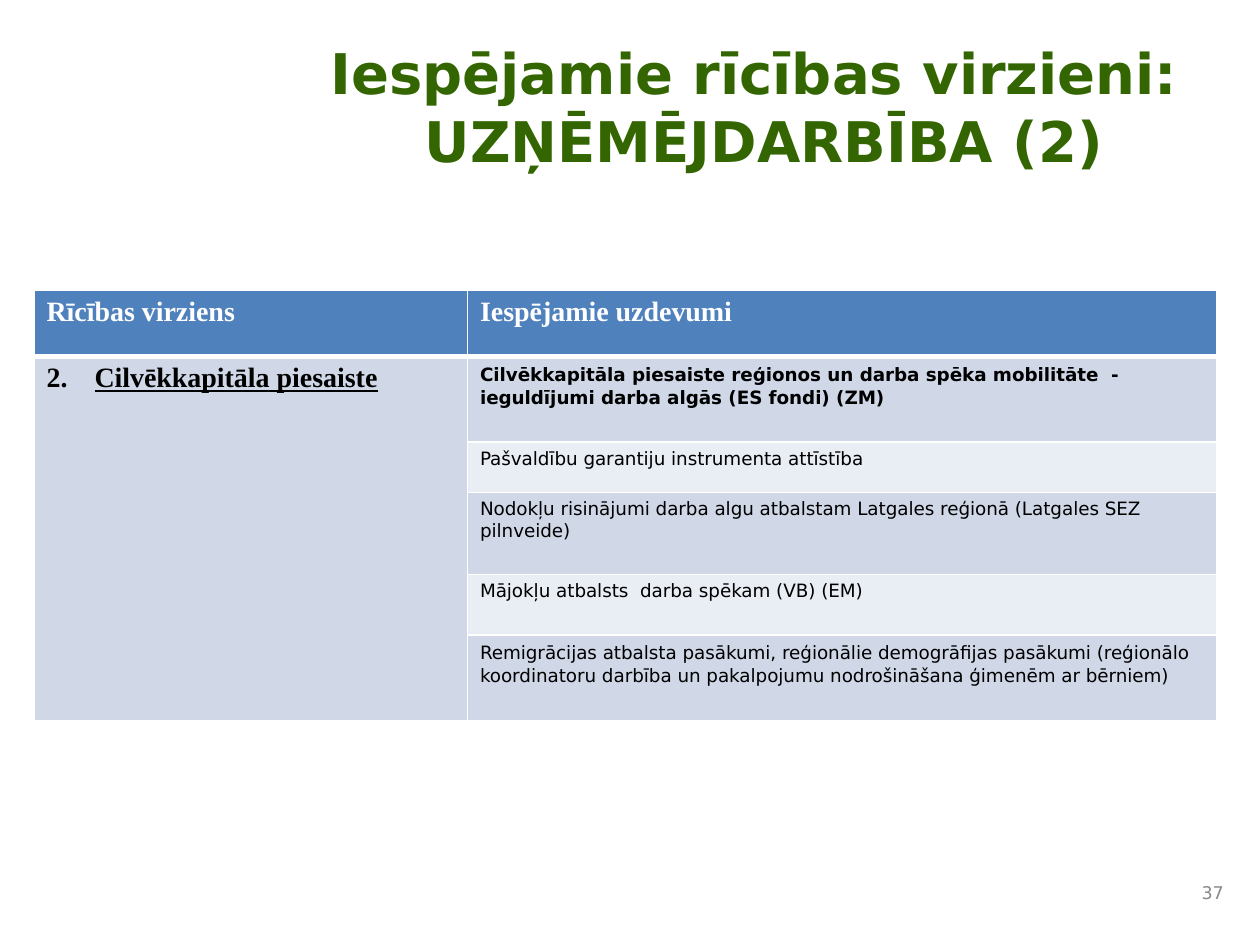
from pptx import Presentation
from pptx.dml.color import RGBColor
from pptx.enum.text import MSO_ANCHOR, PP_ALIGN
from pptx.oxml.ns import qn
from pptx.util import Inches, Pt
from lxml import etree

CENTER, RIGHT = PP_ALIGN.CENTER, PP_ALIGN.RIGHT
TOP, MIDDLE = MSO_ANCHOR.TOP, MSO_ANCHOR.MIDDLE

WHITE = RGBColor(0xFF, 0xFF, 0xFF)
BLACK = RGBColor(0, 0, 0)
GREEN = RGBColor(0x33, 0x66, 0x00)
GRAY = RGBColor(0x89, 0x89, 0x89)
BLUE = RGBColor(0x4F, 0x81, 0xBD)
BANDS = (RGBColor(0xD0, 0xD8, 0xE8), RGBColor(0xE9, 0xED, 0xF4))

SANS, SERIF = "DejaVu Sans", "Times New Roman"

COLUMN_WIDTHS = (3.44, 5.95)
ROW_HEIGHTS = (0.53, 0.68, 0.4, 0.65, 0.48, 0.68)
HEADERS = ("Rīcības virziens", "Iespējamie uzdevumi")
DIRECTION = "Cilvēkkapitāla piesaiste"
# Text, bold, line spacing
TASKS = (
    ("Cilvēkkapitāla piesaiste reģionos un darba spēka mobilitāte  - "
     "ieguldījumi darba algās (ES fondi) (ZM)", True, 1.07),
    ("Pašvaldību garantiju instrumenta attīstība", False, 1),
    ("Nodokļu risinājumi darba algu atbalstam Latgales reģionā "
     "(Latgales SEZ pilnveide)", False, 1),
    ("Mājokļu atbalsts  darba spēkam (VB) (EM)", False, 1),
    ("Remigrācijas atbalsta pasākumi, reģionālie demogrāfijas pasākumi "
     "(reģionālo koordinatoru darbība un pakalpojumu nodrošināšana ģimenēm "
     "ar bērniem)", False, 1.07),
)


class SlideBuilder:
    def __init__(self, slide):
        self.slide = slide

    def run(self, paragraph, text, size, color, font=SANS, bold=False, underline=False):
        run = paragraph.add_run()
        run.text = text
        run.font.name = font
        run.font.size = Pt(size)
        run.font.bold = bold
        run.font.underline = underline
        run.font.color.rgb = color

    def text_box(self, left, top, width, height, align, anchor):
        """Add an empty text box and return its first paragraph."""
        box = self.slide.shapes.add_textbox(
            Inches(left), Inches(top), Inches(width), Inches(height))
        frame = box.text_frame
        frame.word_wrap = True
        frame.vertical_anchor = anchor
        paragraph = frame.paragraphs[0]
        paragraph.alignment = align
        return paragraph

    def table(self, left, top, column_widths, row_heights):
        frame = self.slide.shapes.add_table(
            len(row_heights), len(column_widths), Inches(left), Inches(top),
            Inches(sum(column_widths)), Inches(sum(row_heights)))
        table = frame.table
        for column, width in zip(table.columns, column_widths):
            column.width = Inches(width)
        for row, height in zip(table.rows, row_heights):
            row.height = Inches(height)
        return table

    def cell(self, cell, fill, bottom=1, top=1):
        """Style a cell with white borders and return its first paragraph."""
        properties = cell._tc.get_or_add_tcPr()
        for side, width in (("lnL", 1), ("lnR", 1), ("lnT", top), ("lnB", bottom)):
            line = etree.SubElement(properties, qn(f"a:{side}"), w=str(Pt(width)))
            solid = etree.SubElement(line, qn("a:solidFill"))
            etree.SubElement(solid, qn("a:srgbClr"), val=str(WHITE))
        cell.fill.solid()
        cell.fill.fore_color.rgb = fill
        return cell.text_frame.paragraphs[0]

    def number(self, paragraph, start, indent):
        """Number a paragraph with a hanging indent."""
        properties = paragraph._p.get_or_add_pPr()
        properties.set("marL", str(Inches(indent)))
        properties.set("indent", str(-Inches(indent)))
        etree.SubElement(properties, qn("a:buAutoNum"),
                         type="arabicPeriod", startAt=str(start))


def main():
    presentation = Presentation()
    presentation.slide_width, presentation.slide_height = Inches(10), Inches(7.5)
    builder = SlideBuilder(presentation.slides.add_slide(presentation.slide_layouts[6]))

    table = builder.table(0.27, 2.3, COLUMN_WIDTHS, ROW_HEIGHTS)
    for column, header in enumerate(HEADERS):
        paragraph = builder.cell(table.cell(0, column), BLUE, bottom=3)
        builder.run(paragraph, header, 16, WHITE, SERIF, bold=True)

    direction_cell = table.cell(1, 0)
    direction_cell.merge(table.cell(len(TASKS), 0))
    paragraph = builder.cell(direction_cell, BANDS[0], top=3)
    builder.number(paragraph, 2, 0.38)
    builder.run(paragraph, DIRECTION, 16, BLACK, SERIF, bold=True, underline=True)

    for index, (text, bold, spacing) in enumerate(TASKS):
        paragraph = builder.cell(table.cell(index + 1, 1), BANDS[index % 2],
                                 top=1 if index else 3)
        paragraph.line_spacing = spacing
        builder.run(paragraph, text, 10.5, BLACK, bold=bold)

    title = builder.text_box(2.46, 0.26, 7.21, 1.13, CENTER, TOP)
    builder.run(title, "Iespējamie rīcības virzieni: ", 32, GREEN, bold=True)
    title.add_line_break()
    builder.run(title, "UZŅĒMĒJDARBĪBA (2)", 32, GREEN, bold=True)

    page_number = builder.text_box(9.33, 6.92, 0.48, 0.33, RIGHT, MIDDLE)
    builder.run(page_number, "37", 10, GRAY)

    presentation.save("out.pptx")


if __name__ == "__main__":
    main()
